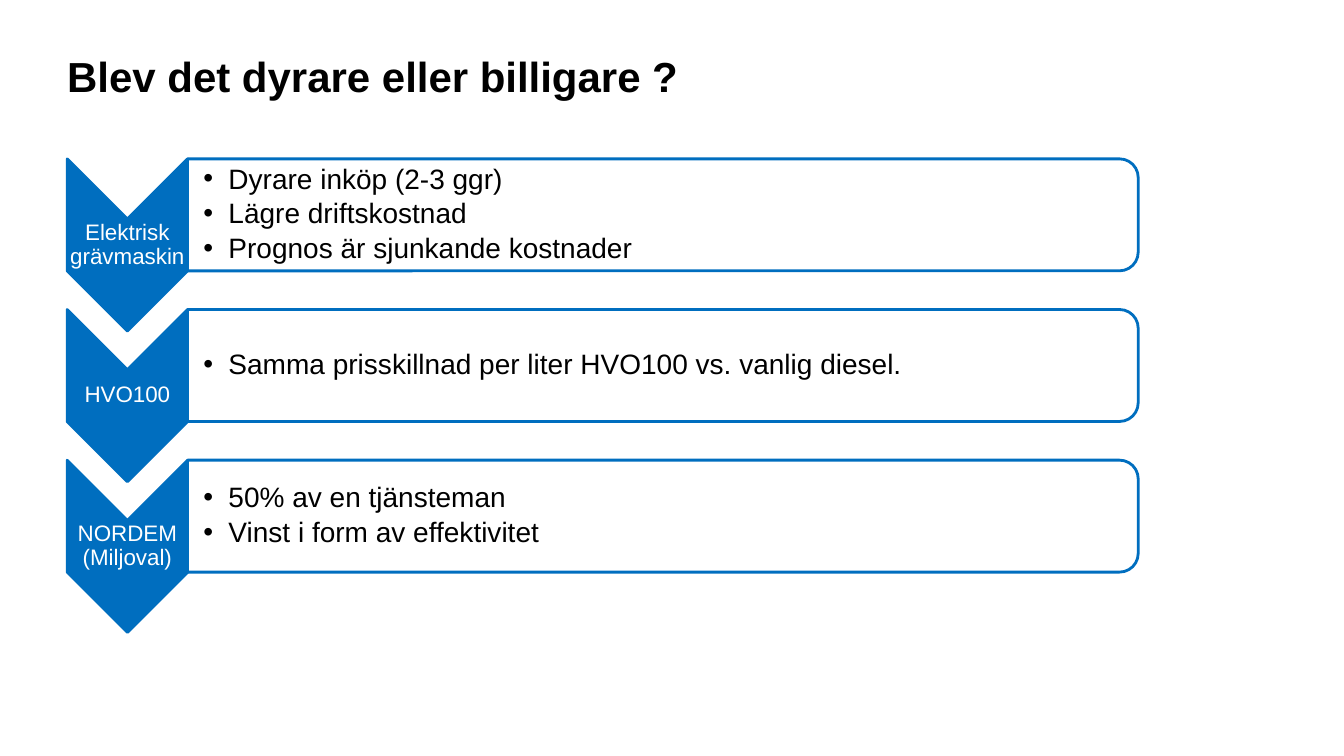
import pptx
import pptx.util
import pptx.dml.color
import pptx.enum.shapes
import pptx.enum.text
import pptx.oxml.ns
from dataclasses import dataclass
from lxml import etree

Pt = pptx.util.Pt
Shape = pptx.enum.shapes.MSO_SHAPE
Align = pptx.enum.text.PP_ALIGN
Anchor = pptx.enum.text.MSO_ANCHOR
qn = pptx.oxml.ns.qn


@dataclass(frozen=True)
class Theme:
    font: str = "Arial"
    blue: str = "006EBF"
    white: str = "FFFFFF"
    black: str = "000000"
    title: int = 30
    body: int = 20
    label: int = 16
    line: int = 2
    alpha: int = 90


THEME = Theme()
LEFT, TOP, PITCH = 48, 113.5, 107.6
WIDE, TALL, DEEP = 86, 80, 123
LONG = 679
ROWS = [
    ("Elektrisk grävmaskin", ["Dyrare inköp (2-3 ggr)", "Lägre driftskostnad",
                              "Prognos är sjunkande kostnader"]),
    ("HVO100", ["Samma prisskillnad per liter HVO100 vs. vanlig diesel."]),
    ("NORDEM (Miljoval)", ["50% av en tjänsteman", "Vinst i form av effektivitet"]),
]


def color(code):
    return pptx.dml.color.RGBColor.from_string(code)


def add_turned(slide, kind, x, y, w, h, fill):
    shape = slide.shapes.add_shape(
        kind, Pt(x + (w - h) / 2), Pt(y + (h - w) / 2), Pt(h), Pt(w))
    shape.rotation = 90
    shape.shadow.inherit = False
    shape.fill.solid()
    shape.fill.fore_color.rgb = color(fill)
    shape.line.color.rgb = color(THEME.blue)
    shape.line.width = Pt(THEME.line)
    return shape


def fade(shape):
    tone = shape.fill._xPr.find(qn("a:solidFill"))[0]
    etree.SubElement(tone, qn("a:alpha")).set("val", str(THEME.alpha * 1000))


def add_bullet(par):
    props = par._p.get_or_add_pPr()
    props.set("marL", str(Pt(18)))
    props.set("indent", str(-Pt(18)))
    etree.SubElement(props, qn("a:buFont")).set("typeface", THEME.font)
    etree.SubElement(props, qn("a:buChar")).set("char", "•")


def add_text(slide, x, y, w, h, lines, size, ink, inset=(0, 0), bold=False,
             align=Align.LEFT, anchor=Anchor.MIDDLE, space=0.9, bullet=False):
    box = slide.shapes.add_textbox(Pt(x), Pt(y), Pt(w), Pt(h))
    frame = box.text_frame
    frame.word_wrap = True
    frame.vertical_anchor = anchor
    frame.margin_left = Pt(inset[0])
    frame.margin_right = frame.margin_top = frame.margin_bottom = Pt(inset[1])
    frame.text = "\n".join(lines)
    for par in frame.paragraphs:
        par.alignment = align
        par.line_spacing = space
        if bullet:
            par.space_after = Pt(3.3)
            add_bullet(par)
        for run in par.runs:
            run.font.name = THEME.font
            run.font.size = Pt(size)
            run.font.bold = bold
            run.font.color.rgb = color(ink)


def add_row(slide, top, label, points):
    right = LEFT + WIDE
    add_turned(slide, Shape.CHEVRON, LEFT, top, WIDE, DEEP, THEME.blue)
    add_text(slide, LEFT, top + 43, WIDE, 37, [label], THEME.label,
             THEME.white, inset=(0.8, 0.8), align=Align.CENTER)
    bar = add_turned(slide, Shape.ROUND_2_SAME_RECTANGLE, right, top, LONG,
                     TALL, THEME.white)
    fade(bar)
    add_text(slide, right, top + 4, LONG - 4, TALL - 8, points, THEME.body,
             THEME.black, inset=(11.2, 0.8), bullet=True)


def main():
    deck = pptx.Presentation()
    deck.slide_width, deck.slide_height = Pt(960), Pt(540)
    slide = deck.slides.add_slide(deck.slide_layouts[6])
    add_text(slide, LEFT, 36, 864, 65, ["Blev det dyrare eller billigare ?"],
             THEME.title, THEME.black, bold=True, anchor=Anchor.TOP, space=1.0)
    for i, (label, points) in enumerate(ROWS):
        add_row(slide, TOP + i * PITCH, label, points)
    deck.save("out.pptx")


if __name__ == "__main__":
    main()
